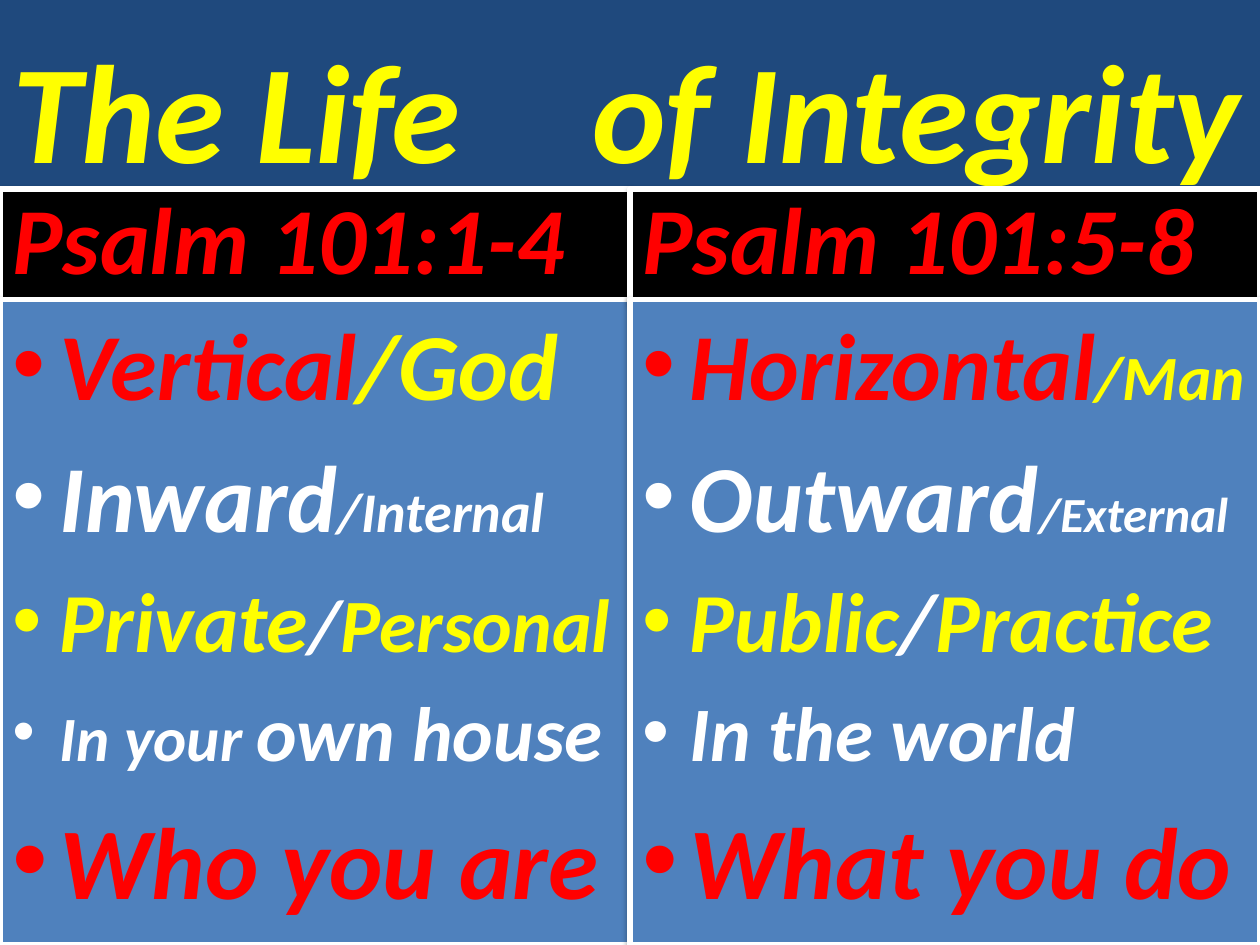
from dataclasses import dataclass

from lxml.etree import SubElement
from pptx import Presentation
from pptx.dml.color import RGBColor
from pptx.enum.text import MSO_ANCHOR, MSO_AUTO_SIZE, PP_ALIGN
from pptx.oxml.ns import qn
from pptx.util import Inches, Pt


@dataclass(frozen=True)
class Theme:
    font: str = "Calibri"
    navy: str = "1F497D"
    blue: str = "4F81BD"
    black: str = "000000"
    white: str = "FFFFFF"
    yellow: str = "FFFF00"
    red: str = "FF0000"
    title: int = 80
    heading: int = 54
    closing: int = 58
    strong: int = 48
    medium: int = 44
    detail: int = 43
    small: int = 36
    smaller: int = 32
    smallest: int = 28


THEME = Theme()
COLUMN_WIDTH = 5
HEADING_TOP, HEADING_HEIGHT = 1.5, 0.88
LIST_TOP, LIST_HEIGHT = 2.38, 5.12

# Each column: heading, then list items made of (text, size, colour) runs.
COLUMNS = [
    ("Psalm 101:1-4", [
        [("Vertical", THEME.heading, THEME.red), ("/God", THEME.heading, THEME.yellow)],
        [("Inward", THEME.heading, THEME.white), ("/Internal", THEME.smaller, THEME.white)],
        [("Private", THEME.strong, THEME.yellow), ("/", THEME.detail, THEME.white),
         ("Personal", THEME.detail, THEME.yellow)],
        [("In your ", THEME.small, THEME.white), ("own house", THEME.medium, THEME.white)],
        [("Who you are", THEME.closing, THEME.red)],
    ]),
    ("Psalm 101:5-8", [
        [("Horizontal", THEME.heading, THEME.red), ("/Man", THEME.small, THEME.yellow)],
        [("Outward", THEME.heading, THEME.white), ("/External", THEME.smallest, THEME.white)],
        [("Public", THEME.strong, THEME.yellow), ("/", THEME.strong, THEME.white),
         ("Practice", THEME.strong, THEME.yellow)],
        [("In the world", THEME.medium, THEME.white)],
        [("What you do", THEME.closing, THEME.red)],
    ]),
]


def place(shape, left, top, width, height, fill, anchor):
    shape.left, shape.top = Inches(left), Inches(top)
    shape.width, shape.height = Inches(width), Inches(height)
    shape.fill.solid()
    shape.fill.fore_color.rgb = RGBColor.from_string(fill)
    shape.text_frame.word_wrap = True
    shape.text_frame.auto_size = MSO_AUTO_SIZE.NONE
    shape.text_frame.vertical_anchor = anchor


def add_frame(shape):
    """Give a panel its white outline and soft shadow below."""
    shape.line.color.rgb = RGBColor.from_string(THEME.white)
    shape.line.width = Pt(3)
    shape.shadow.inherit = False
    effects = shape._element.spPr.find(qn("a:effectLst"))
    shadow = SubElement(effects, qn("a:outerShdw"), blurRad=str(Pt(3.1)),
                        dist=str(Pt(1.6)), dir="5400000", rotWithShape="0")
    color = SubElement(shadow, qn("a:srgbClr"), val=THEME.black)
    SubElement(color, qn("a:alpha"), val="38000")


def style_font(font, size=None, color=None):
    font.name = THEME.font
    font.bold = font.italic = True
    if size:
        font.size = Pt(size)
    if color:
        font.color.rgb = RGBColor.from_string(color)


def add_tab_stop(paragraph, position):
    tabs = SubElement(paragraph._p.get_or_add_pPr(), qn("a:tabLst"))
    SubElement(tabs, qn("a:tab"), pos=str(Inches(position)), algn="l")


def fill_title(shape):
    place(shape, 0, 0, 2 * COLUMN_WIDTH, 1.55, THEME.navy, MSO_ANCHOR.MIDDLE)
    shape.text_frame.margin_right = 0
    shape.text_frame.margin_top = Inches(0.2)
    paragraph = shape.text_frame.paragraphs[0]
    paragraph.alignment = PP_ALIGN.LEFT
    add_tab_stop(paragraph, 4.6)
    paragraph.add_run().text = "The Life\tof Integrity"
    style_font(paragraph.font, THEME.title, THEME.yellow)


def fill_heading(shape, left, text):
    place(shape, left, HEADING_TOP, COLUMN_WIDTH, HEADING_HEIGHT, THEME.black, MSO_ANCHOR.BOTTOM)
    add_frame(shape)
    paragraph = shape.text_frame.paragraphs[0]
    paragraph.add_run().text = text
    style_font(paragraph.font, THEME.heading, THEME.red)


def fill_list(shape, left, items):
    place(shape, left, LIST_TOP, COLUMN_WIDTH, LIST_HEIGHT, THEME.blue, MSO_ANCHOR.TOP)
    add_frame(shape)
    frame = shape.text_frame
    for index, item in enumerate(items):
        paragraph = frame.add_paragraph() if index else frame.paragraphs[0]
        style_font(paragraph.font)
        for text, size, color in item:
            run = paragraph.add_run()
            run.text = text
            run.font.size = Pt(size)
            run.font.color.rgb = RGBColor.from_string(color)


def main():
    presentation = Presentation()
    presentation.slide_width, presentation.slide_height = Inches(10), Inches(7.5)
    comparison_layout = presentation.slide_layouts[4]
    slide = presentation.slides.add_slide(comparison_layout)
    title, *bodies = slide.placeholders
    fill_title(title)
    for column, (heading, items) in enumerate(COLUMNS):
        left = column * COLUMN_WIDTH
        fill_heading(bodies[2 * column], left, heading)
        fill_list(bodies[2 * column + 1], left, items)
    presentation.save("out.pptx")


if __name__ == "__main__":
    main()
